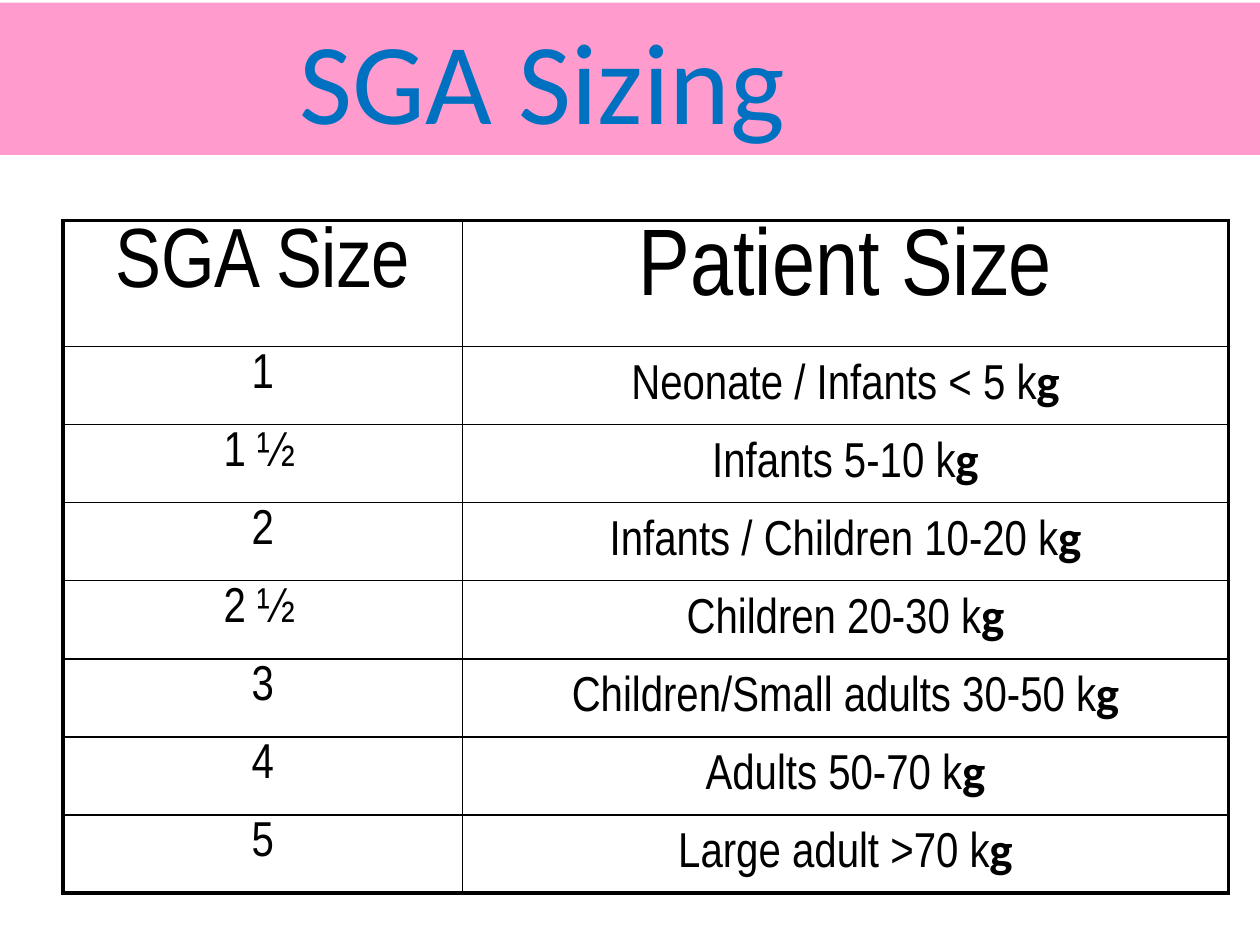
from pptx import Presentation
from pptx.dml.color import RGBColor
from pptx.enum.shapes import MSO_SHAPE as Shape
from pptx.enum.text import PP_ALIGN as Align
from pptx.oxml import parse_xml
from pptx.oxml.ns import nsdecls
from pptx.util import Inches, Pt

ROWS = [
    ("1", "Neonate / Infants < 5 k"),
    ("1 ½ ", "Infants 5-10 k"),
    ("2", "Infants / Children 10-20 k"),
    ("2 ½ ", "Children 20-30 k"),
    ("3", "Children/Small adults 30-50 k"),
    ("4", "Adults 50-70 k"),
    ("5", "Large adult >70 k"),
]


def color(code):
    return RGBColor.from_string(code)


class Deck:
    ink, blue, pink = "000000", "0070C0", "FF9BCD"
    head, body = "Calibri", "Arial Narrow"
    thin, thick = 1, 2.25

    def __init__(self, prs):
        self.slide = prs.slides.add_slide(prs.slide_layouts[6])

    def style(self, run, size, face, code, bold=False):
        font = run.font
        font.size, font.name, font.bold = Pt(size), face, bold
        font.color.rgb = color(code)

    def banner(self, text, box, indent):
        bar = self.slide.shapes.add_shape(Shape.RECTANGLE, *map(Inches, box))
        bar.shadow.inherit = False
        bar.fill.solid()
        bar.fill.fore_color.rgb = color(self.pink)
        bar.line.fill.background()
        frame = bar.text_frame
        frame.text = text
        frame.margin_left = Inches(0.1 + indent)
        para = frame.paragraphs[0]
        para.alignment = Align.LEFT
        self.style(para.runs[0], 66, self.head, self.blue)

    def edge(self, cell, sides):
        """Draw the cell's borders; sides maps L, R, T, B to a width in points."""
        props = cell._tc.get_or_add_tcPr()
        for spot, (side, width) in enumerate(sides.items()):
            props.insert(spot, parse_xml(
                f'<a:ln{side} {nsdecls("a")} w="{Pt(width)}"><a:solidFill>'
                f'<a:srgbClr val="{self.ink}"/></a:solidFill></a:ln{side}>'))

    def cell(self, cell, text, size, unit=""):
        cell.fill.background()
        cell.text = text
        para = cell.text_frame.paragraphs[0]
        para.alignment = Align.CENTER
        para._p.get_or_add_pPr().append(parse_xml(
            f'<a:spcBef {nsdecls("a")}><a:spcPct val="20000"/></a:spcBef>'))
        self.style(para.runs[0], size, self.body, self.ink)
        if unit:
            run = para.add_run()
            run.text = unit
            self.style(run, size, self.head, self.ink, True)

    def table(self, heads, rows, box, widths, tall, high):
        count = len(rows) + 1
        grid = self.slide.shapes.add_table(count, 2, *map(Inches, box)).table
        grid.first_row = grid.horz_banding = False
        for col, width in zip(grid.columns, widths):
            col.width = Inches(width)
        for spot, row in enumerate(grid.rows):
            row.height = Inches(high if spot else tall)
        for col, (text, size) in enumerate(heads):
            self.cell(grid.cell(0, col), text, size)
        for spot, (size, patient) in enumerate(rows, 1):
            self.cell(grid.cell(spot, 0), size, 28)
            self.cell(grid.cell(spot, 1), patient, 28, "g")
        for row in range(count):
            for col in range(2):
                outer = {"L": col == 0, "R": col == 1,
                         "T": row == 0, "B": row == count - 1}
                self.edge(grid.cell(row, col), {
                    side: self.thick if out else self.thin
                    for side, out in outer.items()})


def main():
    prs = Presentation()
    prs.slide_width, prs.slide_height = Inches(10), Inches(7.5)
    deck = Deck(prs)
    deck.table([("SGA Size", 48), ("Patient Size", 54)], ROWS,
               (0.5, 1.75, 9.25, 5.34), (3.17, 6.08), 1, 0.62)
    deck.banner("SGA Sizing", (0, 0.02, 10, 1.21), 2.28)
    prs.save("out.pptx")


if __name__ == "__main__":
    main()
